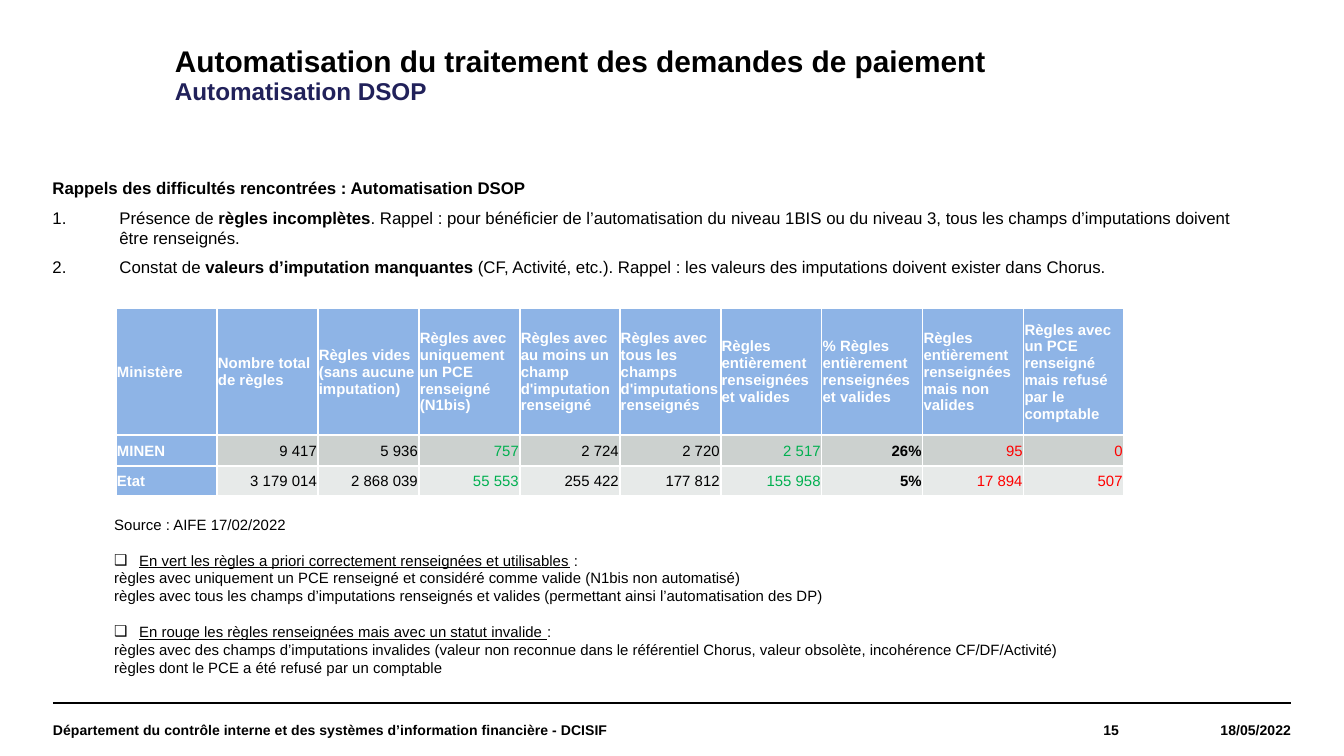
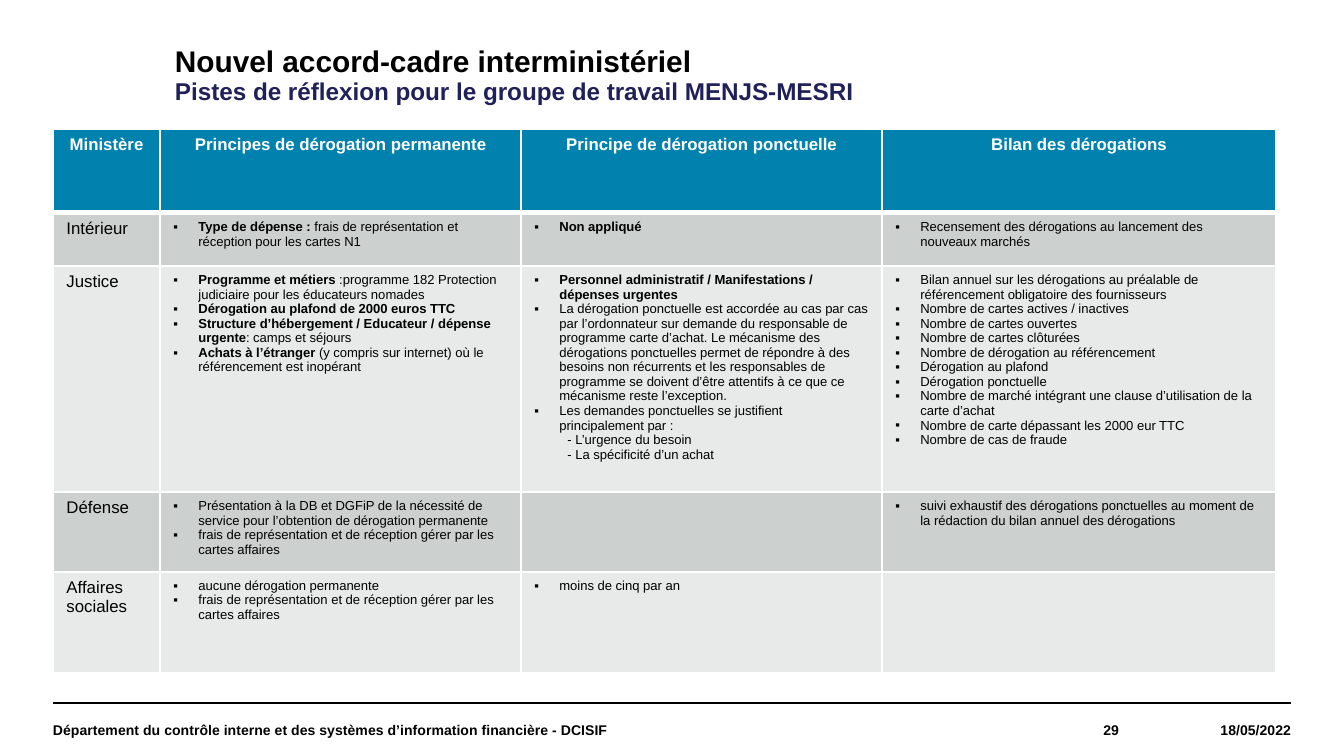
"""Build two slides on payment automation and purchasing-card exemptions."""
from dataclasses import dataclass, replace

from lxml.etree import SubElement
from pptx import Presentation
from pptx.dml.color import RGBColor
from pptx.enum.shapes import MSO_CONNECTOR as Connector
from pptx.enum.text import MSO_ANCHOR as Anchor, MSO_AUTO_SIZE as AutoSize, PP_ALIGN as Align
from pptx.oxml.ns import qn
from pptx.slide import Slide
from pptx.table import Table, _Cell as Cell
from pptx.text.text import TextFrame
from pptx.util import Emu, Inches, Pt

SLIDE_WIDTH, SLIDE_HEIGHT = 1344, 756
SCALE = Inches(10) / SLIDE_WIDTH
FONT = "Arial"

BLACK = RGBColor(0x00, 0x00, 0x00)
WHITE = RGBColor(0xFF, 0xFF, 0xFF)
NAVY = RGBColor(0x21, 0x21, 0x5A)
TEAL = RGBColor(0x00, 0x81, 0xAE)
SKY = RGBColor(0x8E, 0xB4, 0xE6)
GREEN = RGBColor(0x00, 0xB0, 0x50)
RED = RGBColor(0xFF, 0x00, 0x00)
BANDS = (RGBColor(0xCC, 0xD1, 0xCF), RGBColor(0xE7, 0xEA, 0xE9))


@dataclass(frozen=True)
class Style:
    size: float
    color: RGBColor = BLACK
    bold: bool = False
    align: Align = Align.LEFT
    bullet: str = ""
    margin: int = 0
    indent: int = 0
    before: float = 0
    after: float = 0
    spacing: float = 1.0
    emphasis: str = "bold"


@dataclass(frozen=True)
class Line:
    text: str
    style: Style


@dataclass(frozen=True)
class Box:
    left: int
    top: int
    width: int
    height: int


@dataclass(frozen=True)
class FooterPart:
    text: str
    box: Box
    align: Align


TITLE = Style(16, bold=True, spacing=0.9)
SUBTITLE = replace(TITLE, size=13, color=NAVY)
FOOTER = Style(7.5, bold=True)
INTRO = Style(9, bold=True, margin=1, after=5)
NUMBERED = Style(9, bullet="auto", margin=68, indent=-67, after=5)
NOTE = Style(8)
NOTE_HEADING = Style(8, bullet="❑", margin=25, indent=-25, before=9.5, emphasis="underline")
FIGURE = Style(8, align=Align.RIGHT)
RULE_HEADER = Style(8, WHITE, bold=True)
MINISTRY_HEADER = Style(9, WHITE, bold=True, align=Align.CENTER)
MINISTRY = Style(9)
ITEM = Style(7, bullet="▪", margin=25, indent=-25)
SUBITEM = Style(7, margin=33)

TITLE_BOX = Box(175, 23, 1042, 106)
FOOTER_TOP, FOOTER_HEIGHT = 703, 53
FOOTER_LEFT, FOOTER_RIGHT = 53, 1291

RULE_COLUMNS = [
    "Ministère",
    "Nombre total de règles",
    "Règles vides (sans aucune imputation)",
    "Règles avec uniquement un PCE renseigné (N1bis)",
    "Règles avec au moins un champ d'imputation renseigné",
    "Règles avec tous les champs d'imputations renseignés",
    "Règles entièrement renseignées et valides",
    "% Règles entièrement renseignées et valides",
    "Règles entièrement renseignées mais non valides",
    "Règles avec un PCE renseigné mais refusé par le comptable",
]
GOOD, BAD = replace(FIGURE, color=GREEN), replace(FIGURE, color=RED)
RULE_STYLES = [RULE_HEADER, FIGURE, FIGURE, GOOD, FIGURE, FIGURE, GOOD,
               replace(FIGURE, bold=True), BAD, BAD]
RULE_ROWS = [
    ["MINEN", "9 417", "5 936", "757", "2 724", "2 720", "2 517", "26%", "95", "0"],
    ["Etat", "3 179 014", "2 868 039", "55 553", "255 422", "177 812", "155 958", "5%",
     "17 894", "507"],
]

DIFFICULTIES = [
    Line("Rappels des difficultés rencontrées : Automatisation DSOP", INTRO),
    Line("Présence de *règles incomplètes*. Rappel : pour bénéficier de l’automatisation du "
         "niveau 1BIS ou du niveau 3, tous les champs d’imputations doivent être renseignés.",
         NUMBERED),
    Line("Constat de *valeurs d’imputation manquantes *(CF, Activité, etc.). Rappel : les "
         "valeurs des imputations doivent exister dans Chorus.", NUMBERED),
]
NOTES = [
    Line("Source : AIFE 17/02/2022", NOTE),
    Line("*En vert les règles a priori correctement renseignées et utilisables* :", NOTE_HEADING),
    Line("règles avec uniquement un PCE renseigné et considéré comme valide "
         "(N1bis non automatisé)", NOTE),
    Line("règles avec tous les champs d’imputations renseignés et valides "
         "(permettant ainsi l’automatisation des DP)", NOTE),
    Line("*En rouge les règles renseignées mais avec un statut invalide *:", NOTE_HEADING),
    Line("règles avec des champs d’imputations invalides (valeur non reconnue dans le "
         "référentiel Chorus, valeur obsolète, incohérence CF/DF/Activité)", NOTE),
    Line("règles dont le PCE a été refusé par un comptable", NOTE),
]

EXEMPTION_COLUMNS = ["Ministère", "Principes de dérogation permanente",
                     "Principe de dérogation ponctuelle", "Bilan des dérogations"]
CARD_COSTS = "frais de représentation et de réception gérer par les cartes affaires"
EXEMPTION_ROWS = [
    ("Intérieur",
     ["*Type de dépense : *frais de représentation et réception pour les cartes N1"],
     ["*Non appliqué*"],
     ["Recensement des dérogations au lancement des nouveaux marchés"]),
    ("Justice",
     ["*Programme et métiers *:programme 182 Protection judiciaire pour les éducateurs nomades",
      "*Dérogation au plafond de 2000 euros TTC*",
      "*Structure d’hébergement / Educateur / dépense urgente*: camps et séjours",
      "*Achats à l’étranger *(y compris sur internet) où le référencement est inopérant"],
     ["*Personnel administratif / Manifestations / dépenses urgentes*",
      "La dérogation ponctuelle est accordée au cas par cas par l’ordonnateur sur demande du "
      "responsable de programme carte d’achat. Le mécanisme des dérogations ponctuelles permet "
      "de répondre à des besoins non récurrents et les responsables de programme se doivent "
      "d’être attentifs à ce que ce mécanisme reste l’exception.",
      "Les demandes ponctuelles se justifient principalement par :",
      "- L’urgence du besoin",
      "- La spécificité d’un achat"],
     ["Bilan annuel sur les dérogations au préalable de référencement obligatoire des "
      "fournisseurs",
      "Nombre de cartes actives / inactives",
      "Nombre de cartes ouvertes",
      "Nombre de cartes clôturées",
      "Nombre de dérogation au référencement",
      "Dérogation au plafond",
      "Dérogation ponctuelle",
      "Nombre de marché intégrant une clause d’utilisation de la carte d’achat",
      "Nombre de carte dépassant les 2000 eur TTC",
      "Nombre de cas de fraude"]),
    ("Défense",
     ["Présentation à la DB et DGFiP de la nécessité de service pour l’obtention de "
      "dérogation permanente", CARD_COSTS],
     [],
     ["suivi exhaustif des dérogations ponctuelles au moment de la rédaction du bilan annuel "
      "des dérogations"]),
    ("Affaires sociales", ["aucune dérogation permanente", CARD_COSTS],
     ["moins de cinq par an"], []),
]


def px(length: int) -> Emu:
    return Emu(round(length * SCALE))


def place(shape, box: Box) -> None:
    shape.left, shape.top = px(box.left), px(box.top)
    shape.width, shape.height = px(box.width), px(box.height)


def write(frame: TextFrame, lines: list[Line]) -> None:
    for index, line in enumerate(lines):
        style = line.style
        paragraph = frame.paragraphs[0] if index == 0 else frame.add_paragraph()
        paragraph.alignment = style.align
        paragraph.line_spacing = style.spacing
        paragraph.space_before = Pt(style.before)
        paragraph.space_after = Pt(style.after)
        properties = paragraph._p.get_or_add_pPr()
        properties.set("marL", str(px(style.margin)))
        properties.set("indent", str(px(style.indent)))
        if style.bullet == "auto":
            SubElement(properties, qn("a:buAutoNum"), type="arabicPeriod")
        elif style.bullet:
            SubElement(properties, qn("a:buFont"), typeface=FONT)
            SubElement(properties, qn("a:buChar"), char=style.bullet)
        else:
            SubElement(properties, qn("a:buNone"))
        font = paragraph.font
        font.name, font.size, font.bold = FONT, Pt(style.size), style.bold
        font.color.rgb = style.color
        pieces = [(text, place_in_line % 2 == 1)
                  for place_in_line, text in enumerate(line.text.split("*")) if text]
        for text, emphasized in pieces:
            run = paragraph.add_run()
            run.text = text
            if emphasized:
                setattr(font if len(pieces) == 1 else run.font, style.emphasis, True)


def set_insets(frame: TextFrame) -> None:
    frame.margin_left = frame.margin_top = frame.margin_right = frame.margin_bottom = 0


def add_text(slide: Slide, box: Box, lines: list[Line]) -> TextFrame:
    shape = slide.shapes.add_textbox(0, 0, 0, 0)
    place(shape, box)
    frame = shape.text_frame
    frame.word_wrap = True
    write(frame, lines)
    return frame


def add_slide(presentation, layout: int, title: str, subtitle: str, number: int) -> Slide:
    slide = presentation.slides.add_slide(presentation.slide_layouts[layout])
    heading = slide.shapes.title
    place(heading, TITLE_BOX)
    frame = heading.text_frame
    set_insets(frame)
    frame.auto_size, frame.vertical_anchor = AutoSize.NONE, Anchor.MIDDLE
    write(frame, [Line(title, TITLE), Line(subtitle, SUBTITLE)])

    rule = slide.shapes.add_connector(Connector.STRAIGHT, px(FOOTER_LEFT), px(FOOTER_TOP),
                                      px(FOOTER_RIGHT), px(FOOTER_TOP))
    rule.line.color.rgb, rule.line.width = BLACK, Pt(0.8)
    SubElement(rule._element.spPr, qn("a:effectLst"))
    for part in (
        FooterPart("Département du contrôle interne et des systèmes d’information financière"
                   " - DCISIF", Box(FOOTER_LEFT, FOOTER_TOP, 868, FOOTER_HEIGHT), Align.LEFT),
        FooterPart(str(number), Box(921, FOOTER_TOP, 198, FOOTER_HEIGHT), Align.RIGHT),
        FooterPart("18/05/2022", Box(1119, FOOTER_TOP, 172, FOOTER_HEIGHT), Align.RIGHT),
    ):
        frame = add_text(slide, part.box, [Line(part.text, replace(FOOTER, align=part.align))])
        set_insets(frame)
        frame.vertical_anchor = Anchor.MIDDLE
    return slide


def add_table(slide: Slide, left: int, top: int, widths: list[int], heights: list[int]) -> Table:
    table = slide.shapes.add_table(len(heights), len(widths), px(left), px(top),
                                   px(sum(widths)), px(sum(heights))).table
    table.horz_banding = False
    for column, width in zip(table.columns, widths):
        column.width = px(width)
    for row, height in zip(table.rows, heights):
        row.height = px(height)
    return table


def fill_cell(cell: Cell, fill: RGBColor, lines: list[Line], row: int, header_rule: float) -> None:
    properties = cell._tc.get_or_add_tcPr()
    widths = {"L": 1, "R": 1, "T": header_rule if row == 1 else 1,
              "B": header_rule if row == 0 else 1}
    for side, width in widths.items():
        border = SubElement(properties, qn(f"a:ln{side}"), w=str(Pt(width)))
        SubElement(SubElement(border, qn("a:solidFill")), qn("a:srgbClr"), val=str(WHITE))
    cell.fill.solid()
    cell.fill.fore_color.rgb = fill
    write(cell.text_frame, lines)


def add_automation_slide(presentation) -> None:
    slide = add_slide(presentation, 1, "Automatisation du traitement des demandes de paiement",
                      "Automatisation DSOP", 15)
    body = slide.placeholders[1]
    place(body, Box(38, 171, 1238, 363))
    body.text_frame.auto_size = AutoSize.NONE
    write(body.text_frame, DIFFICULTIES)

    table = add_table(slide, 116, 308, [101, 101, 101, 101, 100] * 2, [127, 31, 30])
    for row, texts in enumerate([RULE_COLUMNS, *RULE_ROWS]):
        for column, (text, style) in enumerate(zip(texts, RULE_STYLES)):
            cell = table.cell(row, column)
            cell.margin_left = cell.margin_top = cell.margin_right = px(1)
            cell.margin_bottom = 0
            cell.vertical_anchor = Anchor.MIDDLE
            heading = row == 0 or column == 0
            fill_cell(cell, SKY if heading else BANDS[row - 1],
                      [Line(text, RULE_HEADER if heading else style)], row, 1.5)
    add_text(slide, Box(101, 509, 1023, 195), NOTES)


def add_exemption_slide(presentation) -> None:
    slide = add_slide(presentation, 5, "Nouvel accord-cadre interministériel",
                      "Pistes de réflexion pour le groupe de travail MENJS-MESRI", 29)
    table = add_table(slide, 53, 129, [107, 361, 361, 394], [84, 53, 226, 80, 101])
    for column, text in enumerate(EXEMPTION_COLUMNS):
        fill_cell(table.cell(0, column), TEAL, [Line(text, MINISTRY_HEADER)], 0, 3)
    for row, (ministry, *groups) in enumerate(EXEMPTION_ROWS, start=1):
        fill = BANDS[(row - 1) % 2]
        fill_cell(table.cell(row, 0), fill, [Line(ministry, MINISTRY)], row, 3)
        for column, texts in enumerate(groups, start=1):
            lines = [Line(text, SUBITEM if text.startswith("- ") else ITEM) for text in texts]
            fill_cell(table.cell(row, column), fill, lines, row, 3)


def main() -> None:
    presentation = Presentation()
    presentation.slide_width, presentation.slide_height = px(SLIDE_WIDTH), px(SLIDE_HEIGHT)
    add_automation_slide(presentation)
    add_exemption_slide(presentation)
    presentation.save("out.pptx")


if __name__ == "__main__":
    main()
